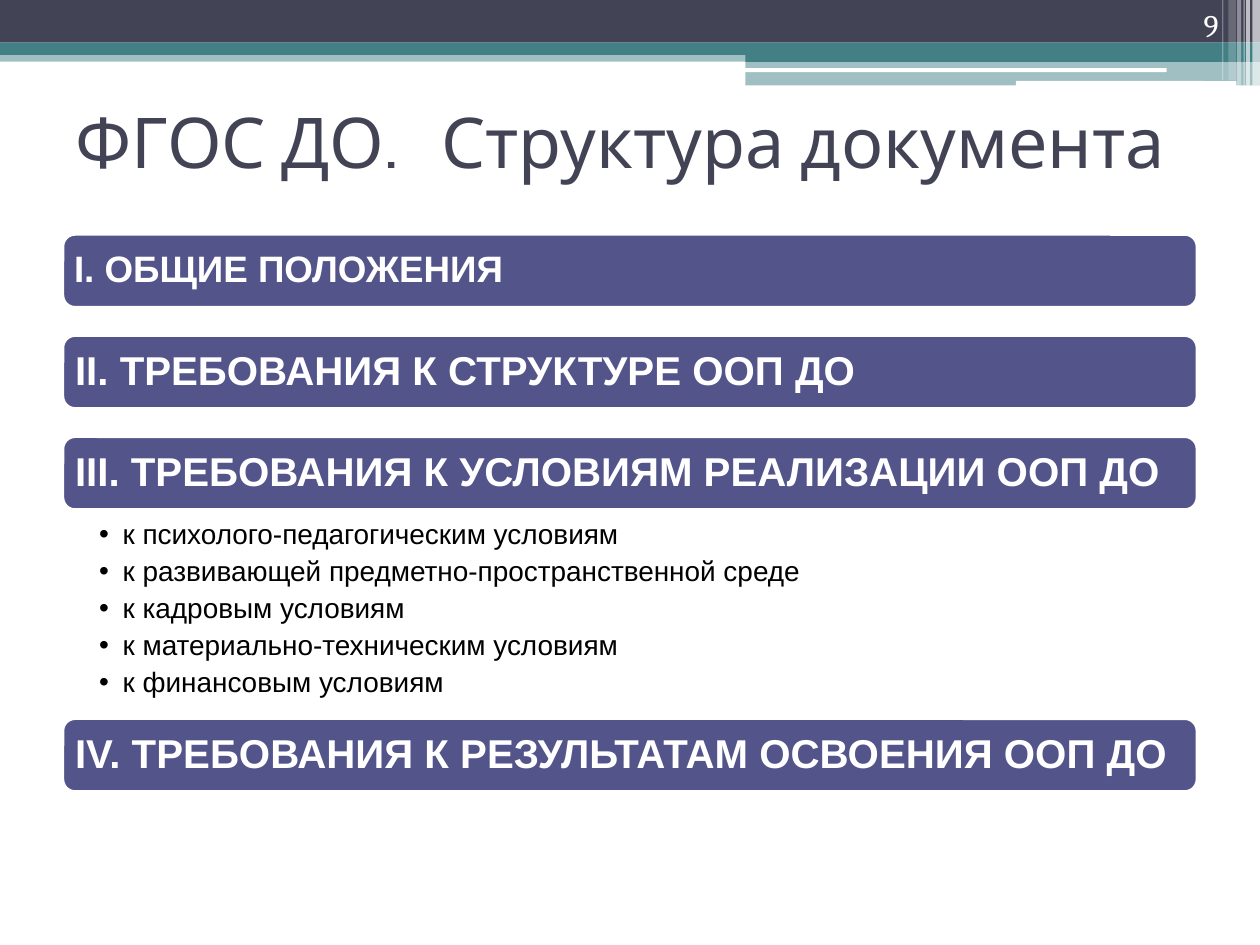
from lxml import etree
from pptx import Presentation
from pptx.dml.color import RGBColor
from pptx.enum.shapes import MSO_SHAPE
from pptx.enum.text import MSO_ANCHOR, MSO_AUTO_SIZE, PP_ALIGN
from pptx.oxml.ns import qn
from pptx.util import Pt

RECT, ROUNDED = MSO_SHAPE.RECTANGLE, MSO_SHAPE.ROUNDED_RECTANGLE
MIDDLE, BOTTOM, TOP = MSO_ANCHOR.MIDDLE, MSO_ANCHOR.BOTTOM, MSO_ANCHOR.TOP
LEFT, RIGHT = PP_ALIGN.LEFT, PP_ALIGN.RIGHT
NO_AUTOFIT = MSO_AUTO_SIZE.NONE
DARK, TEAL, VIOLET, WHITE, BLACK = "424456", "438086", "53548A", "FFFFFF", "000000"


def paint(colour_format, colour, opacity=100):
    """Apply a hex colour to a fill, a line fill or a font."""
    if hasattr(colour_format, "solid"):
        colour_format.solid()
        target = colour_format.fore_color
    else:
        target = colour_format.color
    target.rgb = RGBColor.from_string(colour)
    if opacity < 100:
        colour_node = colour_format._xPr.find(".//" + qn("a:srgbClr"))
        etree.SubElement(colour_node, qn("a:alpha")).set("val", str(opacity * 1000))


def style(paragraph, font_name, size, colour, align=LEFT, bold=False):
    paragraph.alignment = align
    for run in paragraph.runs:
        run.font.name, run.font.size, run.font.bold = font_name, Pt(size), bold
        paint(run.font, colour)


prs = Presentation()
prs.slide_width, prs.slide_height = Pt(720), Pt(540)
slide = prs.slides.add_slide(prs.slide_layouts[1])
paint(slide.background.fill, WHITE)

# Header bands and the thin stripes at the right edge
header_parts = [
    (RECT, 0, 28.8, 720, 6.5, TEAL, 50),
    (RECT, 0, 0, 720, 24.4, DARK, 100),
    (RECT, 0, 24.4, 720, 7, TEAL, 100),
    (RECT, 426, 28, 294, 7.4, TEAL, 100),
    (RECT, 426, 35.2, 294, 13.6, TEAL, 50),
    (ROUNDED, 425.5, 39, 241.2, 2.2, WHITE, 100),
    (ROUNDED, 580.5, 46.3, 126, 2.8, WHITE, 100),
]
edge_stripes = [
    (715.7, 4.3, 49, 65), (712.1, 2.2, 49, 65), (710.6, 0.7, 49, 60),
    (707, 2.2, 49, 40), (702, 4.3, 46, 20), (698.4, 0.7, 46, 30),
]
header_parts += [(RECT, left, 0, width, height, WHITE, opacity)
                 for left, width, height, opacity in edge_stripes]
for outline, left, top, width, height, colour, opacity in header_parts:
    band = slide.shapes.add_shape(outline, Pt(left), Pt(top), Pt(width), Pt(height))
    band.shadow.inherit = False
    band.line.fill.background()
    paint(band.fill, colour, opacity)

# Title, with a tab stop before its second part
title = slide.shapes.title
title.left, title.top, title.width, title.height = Pt(36), Pt(37.5), Pt(648), Pt(85)
title.text_frame.text = "ФГОС ДО.\tСтруктура документа"
title.text_frame.auto_size = NO_AUTOFIT
title.text_frame.vertical_anchor = MIDDLE
heading = title.text_frame.paragraphs[0]
tab_stops = etree.SubElement(heading._p.get_or_add_pPr(), qn("a:tabLst"))
etree.SubElement(tab_stops, qn("a:tab"), pos=str(Pt(209)), algn="l")
style(heading, "Cabin", 40, DARK)

# Slide number
number = slide.shapes.add_textbox(Pt(643.7), Pt(0), Pt(59.8), Pt(28.8))
number.text_frame.word_wrap = True
number.text_frame.vertical_anchor = BOTTOM
number.text_frame.text = "9"
style(number.text_frame.paragraphs[0], "Cambria", 18, WHITE, RIGHT)

# Section bars
sections = [
    (134, 21, "I. ОБЩИЕ ПОЛОЖЕНИЯ"),
    (191.8, 23, "II. ТРЕБОВАНИЯ К СТРУКТУРЕ ООП ДО"),
    (249.6, 23, "III. ТРЕБОВАНИЯ К УСЛОВИЯМ РЕАЛИЗАЦИИ ООП ДО"),
    (410.7, 23, "IV. ТРЕБОВАНИЯ К РЕЗУЛЬТАТАМ ОСВОЕНИЯ ООП ДО"),
]
for top, size, name in sections:
    bar = slide.shapes.add_shape(ROUNDED, Pt(36), Pt(top), Pt(648), Pt(41.6))
    bar.shadow.inherit = False
    paint(bar.fill, VIOLET)
    paint(bar.line.fill, WHITE)
    bar.line.width = Pt(1.5)
    frame = bar.text_frame
    frame.word_wrap = True
    frame.vertical_anchor = MIDDLE
    # The rounded corner adds 2 pt to the inset
    frame.margin_left = frame.margin_right = Pt(size * 0.3 - 2)
    frame.margin_top = frame.margin_bottom = Pt(0)
    frame.text = name
    frame.paragraphs[0].line_spacing = 0.9
    style(frame.paragraphs[0], "Arial", size, WHITE, bold=True)

# Conditions listed under section III
conditions = slide.placeholders[1]
conditions.left, conditions.top = Pt(36), Pt(296)
conditions.width, conditions.height = Pt(648), Pt(106.6)
frame = conditions.text_frame
frame.text = "\n".join([
    "к психолого-педагогическим условиям",
    "к развивающей предметно-пространственной среде",
    "к кадровым условиям",
    "к материально-техническим условиям",
    "к финансовым условиям",
])
frame.auto_size = NO_AUTOFIT
frame.vertical_anchor = TOP
frame.margin_left, frame.margin_right = Pt(20.6), Pt(8.6)
frame.margin_top = frame.margin_bottom = Pt(1.6)
for condition in frame.paragraphs:
    properties = condition._p.get_or_add_pPr()
    properties.set("marL", str(Pt(13.5)))
    properties.set("indent", str(-Pt(13.5)))
    etree.SubElement(properties, qn("a:buChar"), char="•")
    condition.line_spacing = 0.9
    condition.space_before, condition.space_after = Pt(0), Pt(3.8)
    style(condition, "Arial", 16, BLACK)

prs.save("out.pptx")
